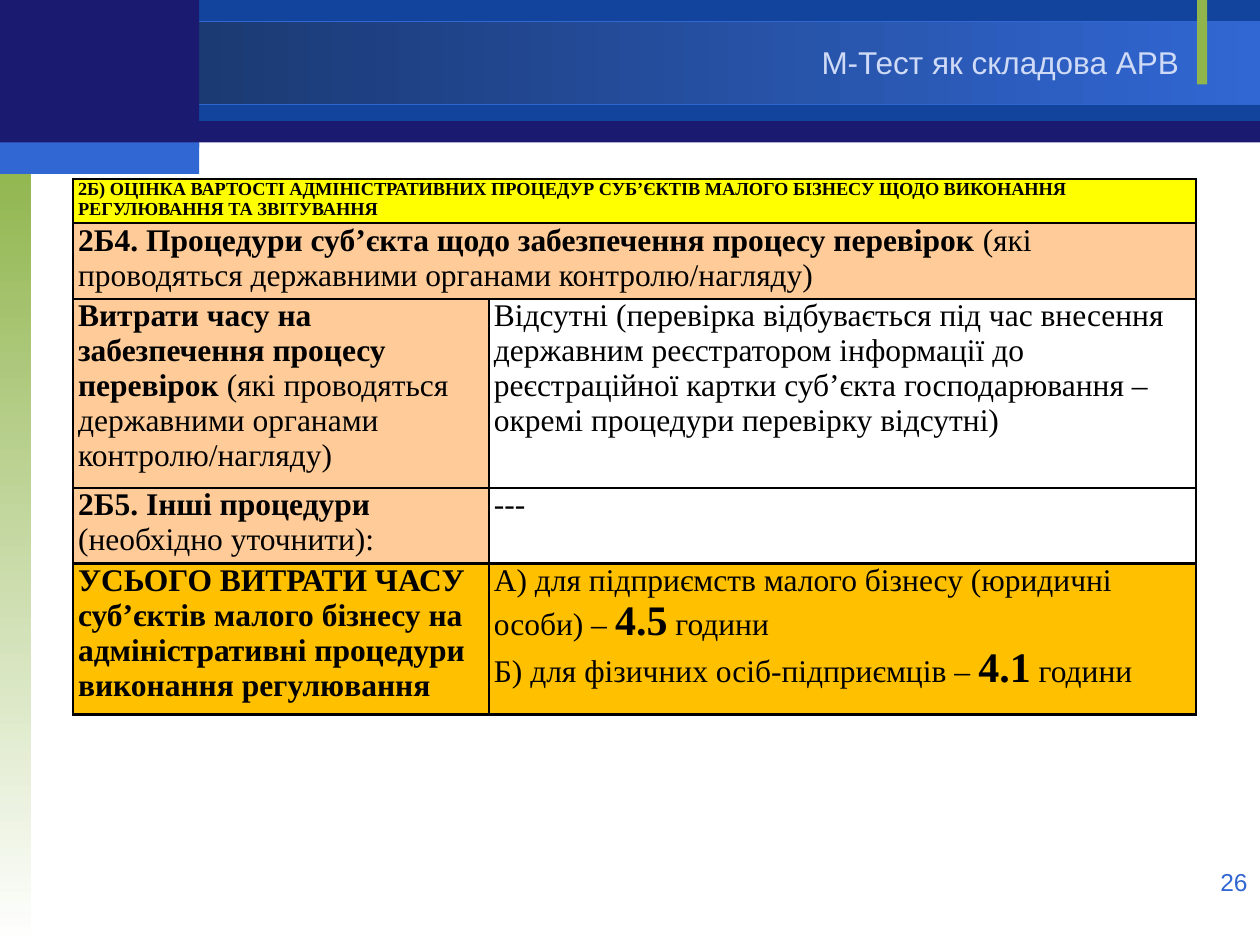
"""Build the slide on the M-Test as part of regulatory impact analysis."""
from lxml.etree import SubElement
from pptx import Presentation
from pptx.dml.color import RGBColor
from pptx.enum.shapes import MSO_SHAPE as Shape
from pptx.enum.text import MSO_ANCHOR as Anchor, PP_ALIGN as Align
from pptx.oxml import parse_xml
from pptx.oxml.ns import nsdecls, qn
from pptx.util import Inches, Pt

THEME = {
    "navy": "1A1A70", "blue": "12449E", "deep": "173161", "bright": "3167D3",
    "green": "90B54D", "pale": "CFDAF6", "white": "FFFFFF", "black": "000000",
    "yellow": "FFFF00", "peach": "FFCC99", "amber": "FFC000",
    "sans": "Arial", "serif": "Times New Roman",
    "heading": 10.5, "body": 18, "figure": 24, "number": 14,
    "thin": 1, "thick": 1.5,
}

TITLE = "М-Тест як складова АРВ"
PAGE_NUMBER = "26"

BANDS = [
    ((0, 0.01, 10, 1.12), ["navy"], 0, None),
    ((1.58, 0, 8.42, 0.96), ["blue"], 0, None),
    ((0, 0.17, 10, 0.66), ["deep", "bright"], 0, "bright"),
    ((0, 1.25, 0.25, 6.25), ["green", "white"], 270, None),
    ((9.5, 0, 0.08, 0.67), ["green"], 0, None),
    ((0, 0, 1.58, 1.17), ["navy"], 0, None),
    ((0, 1.13, 1.58, 0.25), ["bright"], 0, None),
]

TABLE_PLACE = (0.58, 1.42, 8.92, 4.25)
COLUMN_WIDTHS = [3.3, 5.61]
ROW_HEIGHTS = [0.19, 0.19, 0.37, 0.19, 0.37]
BOLD = {"bold": True}
FIGURE = {"bold": True, "size": "figure"}
ROWS = [
    [("yellow", [[("2Б) ОЦІНКА ВАРТОСТІ АДМІНІСТРАТИВНИХ ПРОЦЕДУР СУБ’ЄКТІВ МАЛОГО БІЗНЕСУ "
                   "ЩОДО ВИКОНАННЯ РЕГУЛЮВАННЯ ТА ЗВІТУВАННЯ",
                   {"bold": True, "size": "heading"})]])],
    [("peach", [[("2Б4. Процедури суб’єкта щодо забезпечення процесу перевірок ", BOLD),
                 ("(які проводяться державними органами контролю/нагляду)", {})]])],
    [("peach", [[("Витрати часу на забезпечення процесу перевірок ", BOLD),
                 ("(які проводяться державними органами контролю/нагляду)", {})]]),
     (None, [[("Відсутні (перевірка відбувається під час внесення державним реєстратором "
               "інформації до реєстраційної картки суб’єкта господарювання – "
               "окремі процедури перевірку відсутні)", {})]])],
    [("peach", [[("2Б5. Інші процедури ", BOLD), ("(необхідно уточнити):", {})]]),
     (None, [[("---", {})]])],
    [("amber", [[("УСЬОГО ВИТРАТИ ЧАСУ суб’єктів малого бізнесу на адміністративні "
                  "процедури виконання регулювання", BOLD)]]),
     ("amber", [[("А) для підприємств малого бізнесу (юридичні особи) – ", {}),
                 ("4.5", FIGURE), (" години", {})],
                [("Б) для фізичних осіб-підприємців – ", {}),
                 ("4.1", FIGURE), (" години", {})]])],
]


def color(name):
    return RGBColor.from_string(THEME[name])


def add_text(paragraph, text, font="serif", size="body", ink="black", bold=False):
    run = paragraph.add_run()
    run.text = text
    run.font.name = THEME[font]
    run.font.size = Pt(THEME[size])
    run.font.bold = bold
    run.font.color.rgb = color(ink)


def place(shape, bounds):
    shape.left, shape.top, shape.width, shape.height = map(Inches, bounds)


def add_band(slide, bounds, fills, angle, outline):
    shape = slide.shapes.add_shape(Shape.RECTANGLE, *map(Inches, bounds))
    shape.shadow.inherit = False
    if len(fills) == 1:
        shape.fill.solid()
        shape.fill.fore_color.rgb = color(fills[0])
    else:
        shape.fill.gradient()
        shape.fill.gradient_angle = angle
        for stop, name in zip(shape.fill.gradient_stops, fills):
            stop.color.rgb = color(name)
    if outline:
        shape.line.color.rgb = color(outline)
        shape.line.width = Pt(0.75)
    else:
        shape.line.fill.background()


def set_borders(cell, weights):
    properties = cell._tc.get_or_add_tcPr()
    for position, (side, weight) in enumerate(weights.items()):
        line = parse_xml(f'<a:ln{side} {nsdecls("a")} w="{Pt(THEME[weight])}"/>')
        fill = SubElement(line, qn("a:solidFill"))
        SubElement(fill, qn("a:srgbClr"), val=THEME["black"])
        properties.insert(position, line)


def fill_cell(cell, fill, paragraphs):
    cell.margin_left = cell.margin_right = Inches(0.04)
    cell.margin_top = cell.margin_bottom = 0
    cell.vertical_anchor = Anchor.TOP
    if fill:
        cell.fill.solid()
        cell.fill.fore_color.rgb = color(fill)
    else:
        cell.fill.background()
    frame = cell.text_frame
    for index, runs in enumerate(paragraphs):
        paragraph = frame.add_paragraph() if index else frame.paragraphs[0]
        for text, style in runs:
            add_text(paragraph, text, **style)


def add_cost_table(slide):
    holder = slide.shapes.add_table(
        len(ROWS), len(COLUMN_WIDTHS), *map(Inches, TABLE_PLACE))
    table = holder.table
    table.first_row = table.horz_banding = False
    for column, width in zip(table.columns, COLUMN_WIDTHS):
        column.width = Inches(width)
    for row, height in zip(table.rows, ROW_HEIGHTS):
        row.height = Inches(height)
    place(holder, TABLE_PLACE)
    for row_index, cells in enumerate(ROWS):
        merged = len(cells) == 1
        if merged:
            table.cell(row_index, 0).merge(table.cell(row_index, 1))
        for column_index, (fill, paragraphs) in enumerate(cells):
            fill_cell(table.cell(row_index, column_index), fill, paragraphs)
        for column_index in range(len(COLUMN_WIDTHS)):
            set_borders(table.cell(row_index, column_index), {
                "L": "thin" if column_index and not merged else "thick",
                "R": "thick" if column_index or merged else "thin",
                "T": "thin" if row_index == 1 else "thick",
                "B": "thin" if row_index == 0 else "thick",
            })


def add_title(slide):
    title = slide.shapes.title
    place(title, (6.42, 0.29, 3.07, 0.4))
    frame = title.text_frame
    frame.word_wrap = False
    frame.vertical_anchor = Anchor.TOP
    frame.paragraphs[0].alignment = Align.LEFT
    add_text(frame.paragraphs[0], TITLE, font="sans", ink="pale")
    slide.shapes._spTree.append(title._element)


def add_page_number(slide):
    frame = slide.shapes.add_textbox(*map(Inches, (7.67, 6.83, 2.33, 0.52))).text_frame
    frame.word_wrap = True
    frame.paragraphs[0].alignment = Align.RIGHT
    add_text(frame.paragraphs[0], PAGE_NUMBER, font="sans", size="number", ink="bright")


def main():
    presentation = Presentation()
    presentation.slide_width, presentation.slide_height = Inches(10), Inches(7.5)
    slide = presentation.slides.add_slide(presentation.slide_layouts[5])
    for band in BANDS:
        add_band(slide, *band)
    add_page_number(slide)
    add_cost_table(slide)
    add_title(slide)
    presentation.save("out.pptx")


if __name__ == "__main__":
    main()
